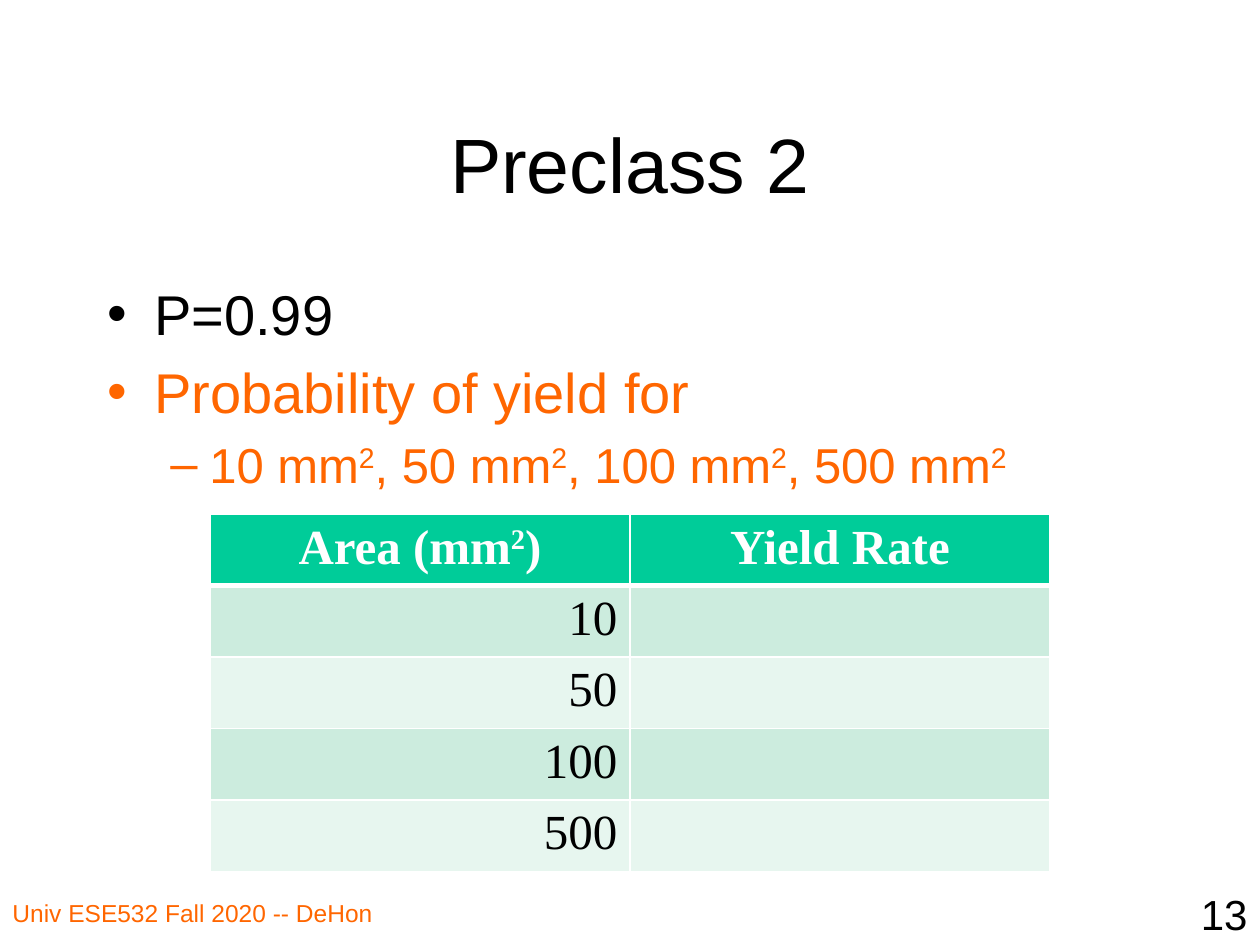
from lxml.etree import SubElement
from pptx import Presentation
from pptx.dml.color import RGBColor
from pptx.enum.text import MSO_ANCHOR, PP_ALIGN
from pptx.oxml.ns import qn
from pptx.util import Emu, Pt

PX_PER_INCH = 126
BLACK, WHITE, ORANGE = "000000", "FFFFFF", "FF6600"
GREEN, MINT, PALE = "00CC99", "CCECDE", "E7F6EF"
LEFT, CENTER, RIGHT = PP_ALIGN.LEFT, PP_ALIGN.CENTER, PP_ALIGN.RIGHT


def px(n):
    return Emu(round(n * 914400 / PX_PER_INCH))


def rgb(color):
    return RGBColor.from_string(color)


class SlideBuilder:
    sans, serif = "Arial", "Times New Roman"

    def __init__(self, s):
        self.s = s

    def runs(self, p, text, size, color, font, bold=False):
        """Add text to a paragraph; parts between ^ marks are superscript."""
        for i, part in enumerate(text.split("^")):
            if not part:
                continue
            r = p.add_run()
            r.text = part
            r.font.size, r.font.name, r.font.bold = Pt(size), font, bold
            r.font.color.rgb = rgb(color)
            if i % 2:
                r._r.get_or_add_rPr().set("baseline", "30000")

    def frame(self, x, y, w, h, anchor=MSO_ANCHOR.TOP):
        tf = self.s.shapes.add_textbox(px(x), px(y), px(w), px(h)).text_frame
        tf.word_wrap = True
        tf.vertical_anchor = anchor
        return tf

    def text(self, box, text, size, color=BLACK, align=LEFT, anchor=MSO_ANCHOR.TOP):
        p = self.frame(*box, anchor).paragraphs[0]
        p.alignment = align
        self.runs(p, text, size, color, self.sans)

    def bullets(self, box, items):
        tf = self.frame(*box)
        for i, (level, text, color) in enumerate(items):
            p = tf.add_paragraph() if i else tf.paragraphs[0]
            size, margin, hang, mark = [(32, 47, 47, "•"), (28, 102, 39, "–")][level]
            p.level = level
            p.space_before = Pt(size * 0.2)
            pPr = p._p.get_or_add_pPr()
            pPr.set("marL", str(px(margin)))
            pPr.set("indent", str(px(-hang)))
            SubElement(pPr, qn("a:buFont"), typeface=self.sans)
            SubElement(pPr, qn("a:buChar"), char=mark)
            self.runs(p, text, size, color, self.sans)

    def borders(self, cell, bottom):
        tcPr = cell._tc.get_or_add_tcPr()
        for side, width in (("L", 1), ("R", 1), ("T", 1), ("B", bottom)):
            ln = SubElement(tcPr, qn(f"a:ln{side}"), w=str(Pt(width)))
            fill = SubElement(ln, qn("a:solidFill"))
            SubElement(fill, qn("a:srgbClr"), val=WHITE)

    def table(self, x, y, col_w, row_h, rows):
        n, m = len(rows), len(rows[0])
        table = self.s.shapes.add_table(
            n, m, px(x), px(y), px(col_w * m), px(row_h * n)).table
        for i, row in enumerate(rows):
            table.rows[i].height = px(row_h)
            head = i == 0
            fill = GREEN if head else MINT if i % 2 else PALE
            for j, text in enumerate(row):
                cell = table.cell(i, j)
                self.borders(cell, 3 if head else 1)
                cell.fill.solid()
                cell.fill.fore_color.rgb = rgb(fill)
                p = cell.text_frame.paragraphs[0]
                p.alignment = CENTER if head else RIGHT
                self.runs(p, text, 28, WHITE if head else BLACK, self.serif, head)


def main():
    prs = Presentation()
    prs.slide_width, prs.slide_height = px(1260), px(945)
    b = SlideBuilder(prs.slides.add_slide(prs.slide_layouts[6]))

    # Title and bullets
    b.text((95, 84, 1070, 158), "Preclass 2", 44, align=CENTER,
           anchor=MSO_ANCHOR.MIDDLE)
    areas = (10, 50, 100, 500)
    b.bullets((95, 273, 1070, 567), [
        (0, "P=0.99", BLACK),
        (0, "Probability of yield for", ORANGE),
        (1, ", ".join(f"{a} mm^2^" for a in areas), ORANGE),
    ])

    # Yield table, rates left open
    b.table(210, 514, 420, 67,
            [("Area (mm^2^)", "Yield Rate")] + [(str(a), "") for a in areas])

    # Footer and page number
    b.text((0, 892, 483, 53), "Univ ESE532 Fall 2020 -- DeHon", 14, ORANGE)
    b.text((998, 882, 262, 63), "13", 24, align=RIGHT)

    prs.save("out.pptx")


if __name__ == "__main__":
    main()
